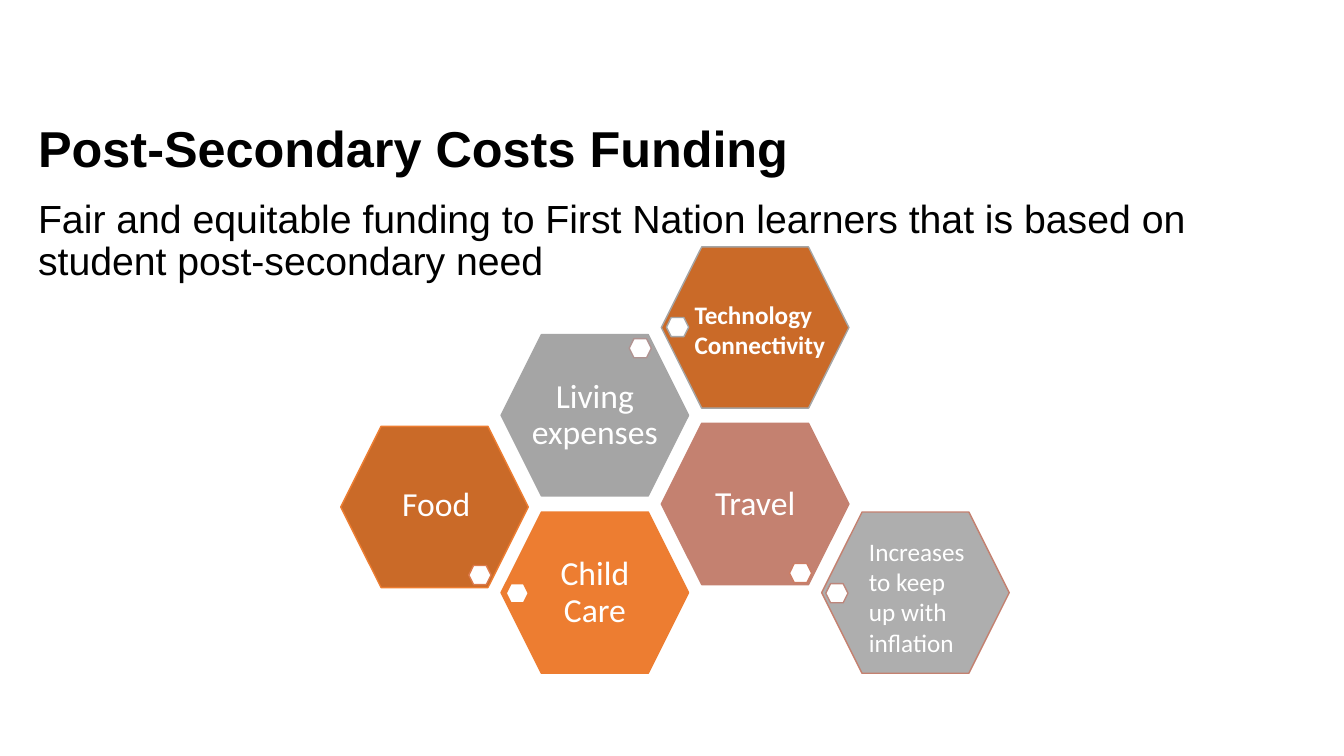
from pptx import Presentation
from pptx.dml.color import RGBColor
from pptx.enum.shapes import MSO_SHAPE
from pptx.enum.text import MSO_ANCHOR, PP_ALIGN
from pptx.oxml.ns import qn
from pptx.util import Inches, Pt
from lxml import etree


def add_hexagon(left, top, width, height, fill, line, opacity=100):
    hexagon = slide.shapes.add_shape(
        MSO_SHAPE.HEXAGON, Inches(left), Inches(top), Inches(width), Inches(height))
    hexagon.shadow.inherit = False
    hexagon.fill.solid()
    hexagon.fill.fore_color.rgb = RGBColor.from_string(fill)
    hexagon.line.color.rgb = RGBColor.from_string(line)
    hexagon.line.width = Pt(1)
    if opacity < 100:
        color = hexagon.fill._xPr.find(qn("a:solidFill"))[0]
        etree.SubElement(color, qn("a:alpha"), val=str(opacity * 1000))


def add_text(box, lines, size, font, color="FFFFFF", bold=False, spacing=None, centered=False):
    frame = slide.shapes.add_textbox(*[Inches(length) for length in box]).text_frame
    frame.word_wrap = True
    if centered:
        frame.vertical_anchor = MSO_ANCHOR.MIDDLE
        frame.margin_left = frame.margin_right = 0
        frame.margin_top = frame.margin_bottom = Inches(0.03)
    for index, line in enumerate(lines):
        paragraph = frame.paragraphs[0] if index == 0 else frame.add_paragraph()
        paragraph.alignment = PP_ALIGN.CENTER if centered else PP_ALIGN.LEFT
        paragraph.line_spacing = spacing
        run = paragraph.add_run()
        run.text = line
        run.font.size = Pt(size)
        run.font.name = font
        run.font.bold = bold
        run.font.color.rgb = RGBColor.from_string(color)


presentation = Presentation()
presentation.slide_width = Inches(13.33)
presentation.slide_height = Inches(7.5)
slide = presentation.slides.add_slide(presentation.slide_layouts[6])

# Heading and statement
add_text((0.28, 1.93, 11.93, 3.99),
         ["Fair and equitable funding to First Nation learners that is based on "
          "student post-secondary need"], 28, "Arial", "000000", spacing=0.9)
add_text((0.28, 1.18, 8.67, 0.85), ["Post-Secondary Costs Funding"],
         36, "Arial", "000000", bold=True, spacing=0.9)

# Honeycomb: column, top, fill, line, opacity, centred label, marker place and line
FIRST_LEFT, COLUMN_STEP = 3.38, 1.59
costs = [
    (1, 5.08, "ED7D31", "ED7D31", 100, "Child Care", (5.02, 5.79), "ED7D31"),
    (0, 4.23, "C55A11", "ED7D31", 90, None, (4.65, 5.61), "DC7A4B"),
    (2, 4.20, "C48170", "C48170", 100, "Travel", (7.83, 5.59), "CC7D64"),
    (3, 5.08, "A6A6A6", "C48170", 90, None, (8.19, 5.79), "BD867B"),
    (1, 3.32, "A5A5A5", "A5A5A5", 100, "Living expenses", (6.24, 3.36), "B09391"),
    (2, 2.45, "C55A11", "A5A5A5", 90, None, (6.61, 3.15), "A5A5A5"),
]
for column, top, fill, line, opacity, label, marker, marker_line in costs:
    left = FIRST_LEFT + column * COLUMN_STEP
    add_hexagon(left, top, 1.86, 1.6, fill, line, opacity)
    if label:
        add_text((left + 0.29, top + 0.25, 1.28, 1.11), [label],
                 24, "Calibri", spacing=0.9, centered=True)
    add_hexagon(*marker, 0.22, 0.19, "FFFFFF", marker_line)

# Left-aligned labels over the remaining hexagons
add_text((3.89, 4.74, 1.18, 0.5), ["Food"], 24, "Calibri")
add_text((6.79, 2.92, 1.6, 1.01), ["Technology", "Connectivity"], 18, "Calibri", bold=True)
add_text((8.52, 5.27, 1.21, 1.31), ["Increases to keep up with inflation"], 18, "Calibri")

presentation.save("out.pptx")
